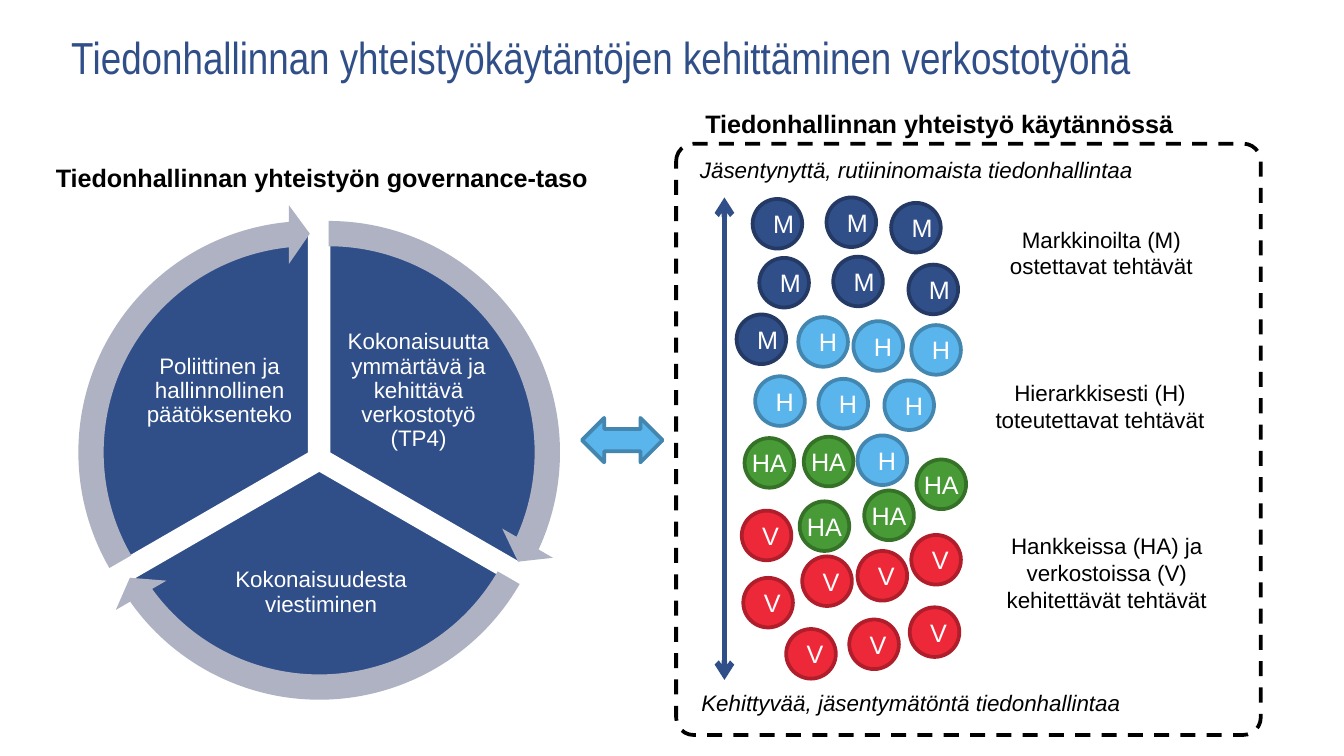
from typing import NamedTuple

from lxml import etree
from pptx import Presentation
from pptx import util as u
from pptx.dml.color import RGBColor
from pptx.enum import dml, shapes, text
from pptx.oxml.ns import qn

Pt = u.Pt
Shape = shapes.MSO_SHAPE
CENTER, LEFT = text.PP_ALIGN.CENTER, text.PP_ALIGN.LEFT

NAVY, SKY, SKY_EDGE = "304E88", "5AB5EC", "4386AF"
WHITE, BLACK, GREY = "FFFFFF", "000000", "AEB2C3"
BALL = 26.6
PIE, RING = 236.9, 265.7


class Box(NamedTuple):
    x: float
    y: float
    w: float
    h: float


class Label(NamedTuple):
    text: str
    box: Box
    size: float = 12
    color: str = BLACK
    align: text.PP_ALIGN = CENTER
    font: str = "Arial"
    bold: bool = False
    italic: bool = False


class Sector(NamedTuple):
    """One third of the wheel; angles are in the units of the shape adjustments."""
    text: str
    x: float
    y: float
    pie_angles: tuple[float, float]
    arrow_angles: tuple[float, float]
    text_box: Box


class BallKind(NamedTuple):
    text: str
    fill: str
    edge: str
    side_inset: float
    places: list[tuple[float, float]]


def rgb(value: str) -> RGBColor:
    return RGBColor.from_string(value)


def add_text(tf, label: Label):
    p = tf.paragraphs[0]
    p.text = label.text
    p.alignment = label.align
    f = p.font
    f.name, f.size, f.bold, f.italic = label.font, Pt(label.size), label.bold, label.italic
    f.color.rgb = rgb(label.color)
    return p


def add_label(s, label: Label, grow: bool = True):
    tf = s.shapes.add_textbox(*map(Pt, label.box)).text_frame
    tf.word_wrap = True
    if grow:
        tf.auto_size = text.MSO_AUTO_SIZE.SHAPE_TO_FIT_TEXT
    else:
        tf.vertical_anchor = text.MSO_ANCHOR.MIDDLE
    add_text(tf, label)
    return tf


def add_shape(s, kind: Shape, box: Box, fill: str, edge: str | None = None,
              adjustments: tuple[float, ...] = ()):
    sp = s.shapes.add_shape(kind, *map(Pt, box))
    sp.shadow.inherit = False
    for i, value in enumerate(adjustments):
        sp.adjustments[i] = value
    sp.fill.solid()
    sp.fill.fore_color.rgb = rgb(fill)
    if edge:
        sp.line.color.rgb = rgb(edge)
        sp.line.width = Pt(2)
    else:
        sp.line.fill.background()
    return sp


def add_double_arrow(s, x: float, top: float, bottom: float) -> None:
    line = s.shapes.add_connector(shapes.MSO_CONNECTOR.STRAIGHT,
                                  Pt(x), Pt(top), Pt(x), Pt(bottom))
    line.line.color.rgb = rgb(NAVY)
    line.line.width = Pt(3)
    ln = line.line._get_or_add_ln()
    for end in ("a:headEnd", "a:tailEnd"):
        etree.SubElement(ln, qn(end), type="arrow")
    etree.SubElement(line._element.spPr, qn("a:effectLst"))


def add_wheel(s, sectors: list[Sector]) -> None:
    for sector in sectors:
        add_shape(s, Shape.PIE, Box(sector.x, sector.y, PIE, PIE), NAVY, WHITE,
                  sector.pie_angles)
        tf = add_label(s, Label(sector.text, sector.text_box, color=WHITE), grow=False)
        tf.margin_left = tf.margin_right = tf.margin_top = tf.margin_bottom = Pt(1.2)
        tf.paragraphs[0].line_spacing = 0.9
    for sector in sectors:
        box = Box(sector.x - 14.4, sector.y - 15.1, RING, RING)
        add_shape(s, Shape.CIRCULAR_ARROW, box, GREY,
                  adjustments=(0.051, 3.275, *sector.arrow_angles, 0.059))


def add_balls(s, kind: BallKind) -> None:
    for x, y in kind.places:
        box = Box(x, y, BALL, BALL)
        tf = add_shape(s, Shape.OVAL, box, kind.fill, kind.edge).text_frame
        tf.margin_left = tf.margin_right = Pt(kind.side_inset)
        tf.vertical_anchor = text.MSO_ANCHOR.MIDDLE
        add_text(tf, Label(kind.text, box, 13.5, WHITE))


TITLE = Label("Tiedonhallinnan yhteistyökäytäntöjen kehittäminen verkostotyönä",
              Box(31, 8.6, 643.7, 43.2), 24, NAVY, LEFT, "Arial Narrow")

LABELS = [
    Label("Jäsentynyttä, rutiininomaista tiedonhallintaa",
          Box(367.9, 79.9, 272.9, 21.6), align=LEFT, italic=True),
    Label("Kehittyvää, jäsentymätöntä tiedonhallintaa",
          Box(368.6, 365.8, 245.5, 21.6), align=LEFT, italic=True),
    Label("Markkinoilta (M) ostettavat tehtävät", Box(524.9, 117.4, 130.3, 36)),
    Label("Hierarkkisesti (H) toteutettavat tehtävät", Box(524.2, 199.4, 130.3, 36)),
    Label("Hankkeissa (HA) ja verkostoissa (V) kehitettävät tehtävät",
          Box(527.8, 281.5, 130.3, 51.1)),
    Label("Tiedonhallinnan yhteistyön governance-taso",
          Box(15.8, 83.5, 313.2, 23.8), 13.5, bold=True),
    Label("Tiedonhallinnan yhteistyö käytännössä",
          Box(357.8, 54.7, 290.9, 23.8), 13.5, bold=True),
]

SECTORS = [
    Sector("Kokonaisuutta ymmärtävä ja kehittävä verkostotyö (TP4)", 57.6, 124.6,
           (162, 18), (14.72, 161.99), Box(182.2, 174.2, 84.2, 70.6)),
    Sector("Kokonaisuudesta viestiminen", 52.6, 133.2,
           (18, 90), (86.72, 18), Box(108.7, 286.6, 126.7, 61.9)),
    Sector("Poliittinen ja hallinnollinen päätöksenteko", 47.5, 124.6,
           (90, 162), (158.73, 90), Box(75.6, 174.2, 84.2, 70.6)),
]

BALLS = [
    BallKind("M", NAVY, "243A65", 7.2, [
        (403.2, 106.6), (442.8, 105.8), (477.4, 108.7), (406.8, 138.2),
        (446.4, 137.5), (486.7, 141.8), (394.6, 168.5)]),
    BallKind("H", SKY, SKY_EDGE, 7.2, [
        (427.7, 169.9), (457.2, 172.1), (488.2, 174.2), (404.6, 201.6),
        (438.5, 203), (473.8, 203.8), (459.4, 233.3)]),
    BallKind("V", "ED2939", "AF1E2A", 7.2, [
        (397.4, 273.6), (429.8, 298.1), (459.4, 295.2), (488.2, 286.6),
        (398.2, 309.6), (421.2, 337), (455, 331.9), (487.4, 325.4)]),
    BallKind("HA", "479A36", "357228", 0, [
        (398.9, 234.7), (430.6, 234), (491, 246.2), (463, 262.8), (428.4, 268.6)]),
]


def main() -> None:
    prs = Presentation()
    prs.slide_width, prs.slide_height = Pt(720), Pt(405)
    s = prs.slides.add_slide(prs.slide_layouts[6])

    frame = add_shape(s, Shape.ROUNDED_RECTANGLE, Box(362.2, 77, 313.2, 316.8),
                      WHITE, BLACK, (0.03,))
    frame.line.dash_style = dml.MSO_LINE.DASH
    add_label(s, TITLE, grow=False)
    add_double_arrow(s, 388.1, 105.8, 364.3)
    for label in LABELS:
        add_label(s, label)
    add_shape(s, Shape.LEFT_RIGHT_ARROW, Box(311.8, 223.9, 43.2, 23.8), SKY, SKY_EDGE)
    add_wheel(s, SECTORS)
    for kind in BALLS:
        add_balls(s, kind)

    prs.save("out.pptx")


if __name__ == "__main__":
    main()
